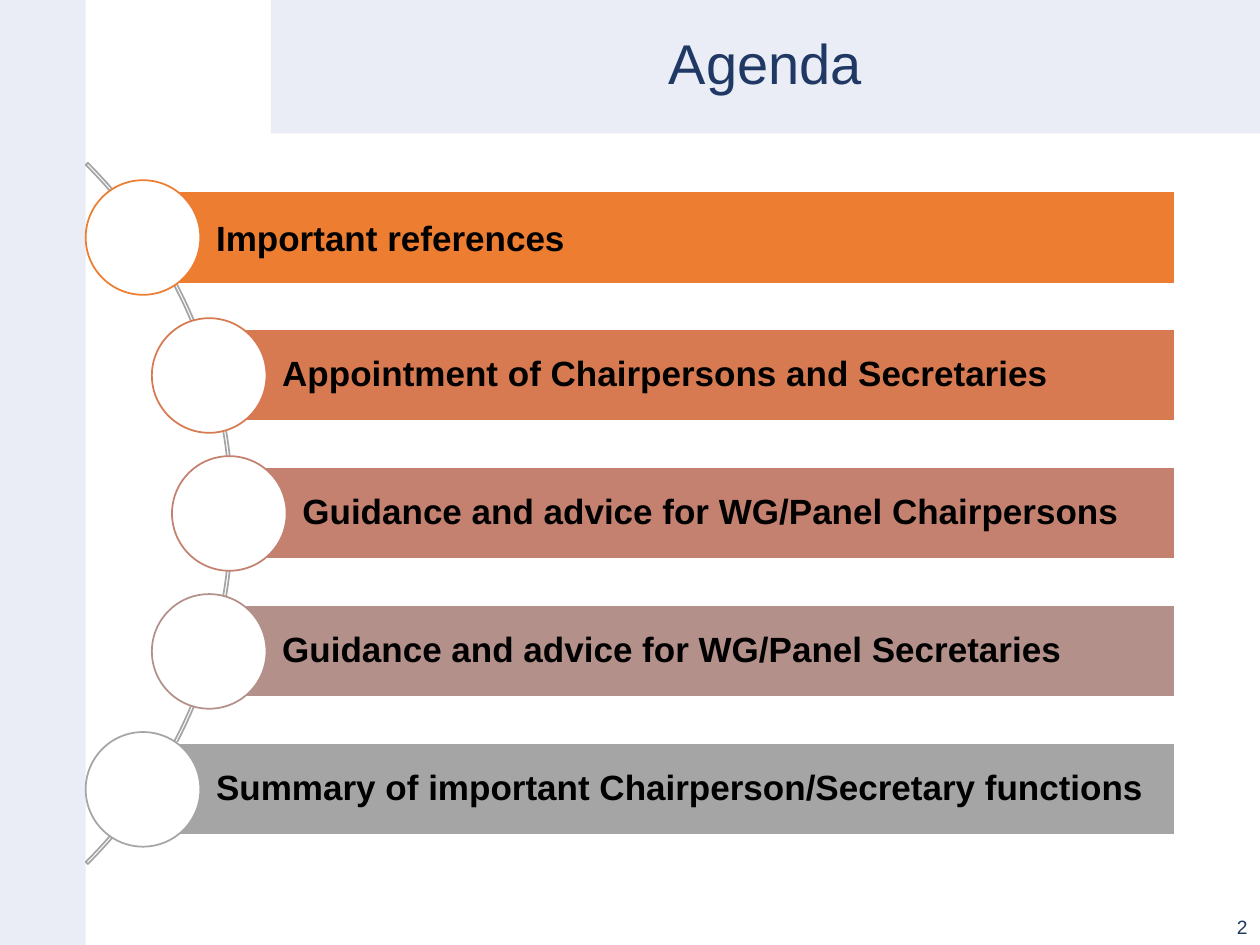
"""Build the agenda slide: five bars with circles strung along an arc."""
from dataclasses import dataclass

import pptx
import pptx.dml.color
import pptx.enum.shapes
import pptx.enum.text
import pptx.util

COLORS = {
    "pale": "EAEDF6",
    "navy": "203864",
    "white": "FFFFFF",
    "black": "000000",
    "orange": "ED7D31",
    "rust": "D87A51",
    "clay": "C48170",
    "mauve": "B4908B",
    "gray": "A5A5A5",
}
FONT = "Arial"
COLUMNS, ROWS = 100, 75
CELL = pptx.util.Inches(0.1)
BAR_RIGHT, BAR_HEIGHT, CIRCLE_SIZE = 93.25, 7.3, 9.1
FIRST_CENTER, ROW_PITCH = 18.85, 10.95
ARC_SIZE, ARC_RIGHT = 78.7, 18.5
KINDS = pptx.enum.shapes.MSO_SHAPE
ALIGN = pptx.enum.text.PP_ALIGN
ANCHOR = pptx.enum.text.MSO_ANCHOR


@dataclass(frozen=True)
class Area:
    column: float
    row: float
    columns: float
    rows: float

    def place(self) -> list[int]:
        return [round(n * CELL) for n in (self.column, self.row, self.columns, self.rows)]


@dataclass(frozen=True)
class Topic:
    text: str
    color: str
    center: float
    spacing: float = 0.9


TOPICS = [
    Topic("Important references", "orange", 11.35, 1.0),
    Topic("Appointment of Chairpersons and Secretaries", "rust", 16.6),
    Topic("Guidance and advice for WG/Panel Chairpersons", "clay", 18.2),
    Topic("Guidance and advice for WG/Panel Secretaries", "mauve", 16.6),
    Topic("Summary of important Chairperson/Secretary functions", "gray", 11.35),
]


def rgb(name: str) -> pptx.dml.color.RGBColor:
    return pptx.dml.color.RGBColor.from_string(COLORS[name])


def add_figure(page, kind, area: Area, fill: str | None, line: str | None = None):
    figure = page.shapes.add_shape(kind, *area.place())
    figure.shadow.inherit = False
    if fill:
        figure.fill.solid()
        figure.fill.fore_color.rgb = rgb(fill)
    else:
        figure.fill.background()
    if line:
        figure.line.color.rgb = rgb(line)
        figure.line.width = pptx.util.Pt(1)
    else:
        figure.line.fill.background()
    return figure


def write(box, text: str, size: float, color: str, align, anchor,
          bold: bool = False, spacing: float = 1.0) -> None:
    frame = box.text_frame
    frame.word_wrap = True
    frame.vertical_anchor = anchor
    para = frame.paragraphs[0]
    para.alignment = align
    para.line_spacing = spacing
    span = para.add_run()
    span.text = text
    span.font.name = FONT
    span.font.size = pptx.util.Pt(size)
    span.font.bold = bold
    span.font.color.rgb = rgb(color)


def add_arc(page, middle: float) -> None:
    area = Area(ARC_RIGHT - ARC_SIZE, middle - ARC_SIZE / 2, ARC_SIZE, ARC_SIZE)
    arc = add_figure(page, KINDS.BLOCK_ARC, area, None, "gray")
    for index, value in enumerate((189, 27, 0.3 / 100)):
        arc.adjustments[index] = value


def add_topic(page, topic: Topic, middle: float) -> None:
    bar_area = Area(topic.center, middle - BAR_HEIGHT / 2, BAR_RIGHT - topic.center, BAR_HEIGHT)
    bar = add_figure(page, KINDS.RECTANGLE, bar_area, topic.color, "white")
    frame = bar.text_frame
    frame.margin_left = round(5.8 * CELL)
    frame.margin_top = frame.margin_right = frame.margin_bottom = round(0.6 * CELL)
    write(bar, topic.text, 20, "black", ALIGN.LEFT, ANCHOR.MIDDLE, True, topic.spacing)
    radius = CIRCLE_SIZE / 2
    circle_area = Area(topic.center - radius, middle - radius, CIRCLE_SIZE, CIRCLE_SIZE)
    add_figure(page, KINDS.OVAL, circle_area, "white", topic.color)


def main() -> None:
    deck = pptx.Presentation()
    deck.slide_width, deck.slide_height = COLUMNS * CELL, ROWS * CELL
    page = deck.slides.add_slide(deck.slide_layouts[6])

    add_figure(page, KINDS.RECTANGLE, Area(0, 0, 6.8, ROWS), "pale")
    header = Area(21.5, 0, COLUMNS - 21.5, 10.6)
    add_figure(page, KINDS.RECTANGLE, header, "pale")
    title = page.shapes.add_textbox(*header.place())
    write(title, "Agenda", 32, "navy", ALIGN.CENTER, ANCHOR.MIDDLE, spacing=0.9)

    add_arc(page, FIRST_CENTER + ROW_PITCH * (len(TOPICS) - 1) / 2)
    for index, topic in enumerate(TOPICS):
        add_topic(page, topic, FIRST_CENTER + ROW_PITCH * index)

    number = page.shapes.add_textbox(*Area(77.5, 71, 22.5, 4).place())
    write(number, "2", 11, "navy", ALIGN.RIGHT, ANCHOR.BOTTOM)
    deck.save("out.pptx")


if __name__ == "__main__":
    main()
